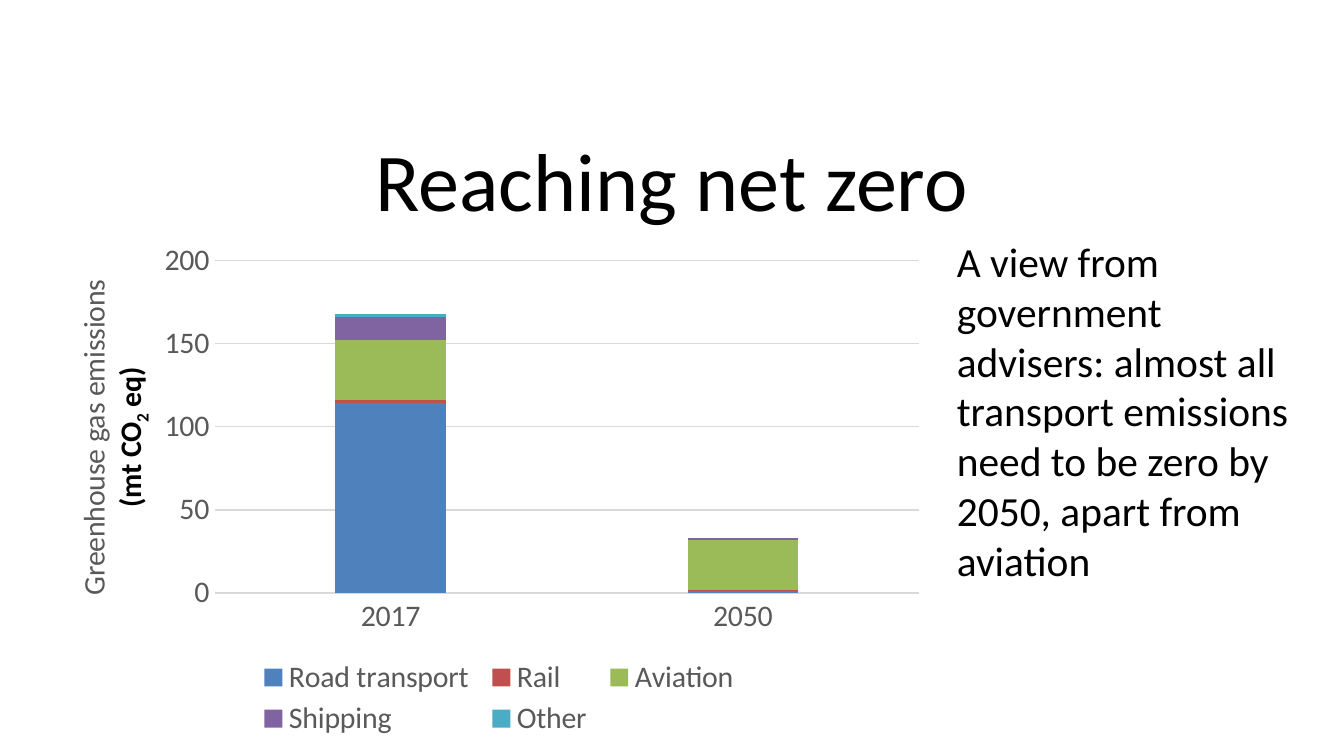
from pptx import Presentation
from pptx.chart.data import CategoryChartData
from pptx.dml.color import RGBColor
from pptx.enum.chart import XL_CHART_TYPE, XL_LEGEND_POSITION, XL_TICK_MARK
from pptx.enum.text import MSO_ANCHOR, MSO_AUTO_SIZE, PP_ALIGN
from pptx.oxml import parse_xml
from pptx.oxml.ns import nsdecls, qn
from pptx.util import Cm, Pt

STACKED = XL_CHART_TYPE.COLUMN_STACKED
BOTTOM = XL_LEGEND_POSITION.BOTTOM
NO_TICK = XL_TICK_MARK.NONE
TOP, MIDDLE = MSO_ANCHOR.TOP, MSO_ANCHOR.MIDDLE
NO_FIT = MSO_AUTO_SIZE.NONE
LEFT, CENTER = PP_ALIGN.LEFT, PP_ALIGN.CENTER

COLORS = {
    "text": "000000", "label": "595959", "grid": "D9D9D9",
    "Road transport": "4F81BD", "Rail": "C0504D", "Aviation": "9BBB59",
    "Shipping": "8064A2", "Other": "4BACC6",
}
YEARS = ["2017", "2050"]
DATA = {
    "Road transport": (114, 1), "Rail": (2, 1), "Aviation": (36, 30),
    "Shipping": (14, 1), "Other": (2, 0),
}


def color(name):
    return RGBColor.from_string(COLORS[name])


def assign(target, **values):
    for name, value in values.items():
        setattr(target, name, value)


def arrange(part, index, inner=False, **spots):
    """Place a chart part by fractions of the chart's size."""
    for old in part.findall(qn("c:layout")):
        part.remove(old)
    target = '<c:layoutTarget val="inner"/>' if inner else ""
    modes = "".join(f'<c:{key}Mode val="edge"/>' for key in "xy")
    sizes = "".join(f'<c:{key} val="{val}"/>' for key, val in spots.items())
    part.insert(index, parse_xml(
        f'<c:layout {nsdecls("c")}><c:manualLayout>{target}{modes}{sizes}'
        "</c:manualLayout></c:layout>"))


class Deck:
    """Holds the style and the current slide."""

    face = "Calibri"

    def __init__(self, width, height):
        self.file = Presentation()
        assign(self.file, slide_width=width, slide_height=height)
        self.slide = self.file.slides.add_slide(self.file.slide_layouts[1])

    def font(self, font, size, tone="text", bold=False):
        assign(font, name=self.face, size=Pt(size), bold=bold)
        font.color.rgb = color(tone)

    def fill(self, index, box, text, size, anchor, align):
        """Move a placeholder and write one plain paragraph in it."""
        shape = self.slide.placeholders[index]
        assign(shape, **dict(zip(("left", "top", "width", "height"), map(Cm, box))))
        frame = shape.text_frame
        assign(frame, text=text, word_wrap=True, auto_size=NO_FIT,
               vertical_anchor=anchor)
        para = frame.paragraphs[0]
        assign(para, alignment=align, space_before=Pt(0))
        props = para._p.get_or_add_pPr()
        for key in ("marL", "indent"):
            props.set(key, "0")
        props.append(parse_xml(f'<a:buNone {nsdecls("a")}/>'))
        self.font(para.runs[0].font, size)

    def chart(self, box):
        data = CategoryChartData()
        data.categories = YEARS
        for name, values in DATA.items():
            data.add_series(name, values)
        chart = self.slide.shapes.add_chart(STACKED, *map(Cm, box), data).chart
        self.font(chart.font, 10)
        assign(chart, has_title=False, has_legend=True)
        assign(chart.legend, position=BOTTOM, include_in_layout=False)
        self.font(chart.legend.font, 16, "label")

        plot = chart.plots[0]
        assign(plot, gap_width=219, overlap=100, vary_by_categories=False)
        for bar in plot.series:
            bar.format.fill.solid()
            bar.format.fill.fore_color.rgb = color(bar.name)

        for axis in (chart.category_axis, chart.value_axis):
            assign(axis, major_tick_mark=NO_TICK, minor_tick_mark=NO_TICK)
            self.font(axis.tick_labels.font, 16, "label")
        scale = chart.value_axis
        assign(scale, minimum_scale=0, maximum_scale=200, major_unit=50,
               has_major_gridlines=True)
        scale.format.line.fill.background()
        for line in (chart.category_axis.format.line,
                     scale.major_gridlines.format.line):
            line.color.rgb = color("grid")
            line.width = Pt(0.75)

        title = self.label(scale)
        root = chart._chartSpace.chart
        arrange(root.plotArea, 0, True, x=0.2, y=0.06, w=0.78, h=0.65)
        arrange(chart.legend._element, 1, x=0.24, y=0.83, w=0.55, h=0.17)
        arrange(title._element, 1, x=0.04, y=0.09)

    def label(self, axis):
        """Write the two-line upright title of the value axis."""
        title = axis.axis_title
        frame = title.text_frame
        props = frame._txBody.bodyPr
        props.set("rot", "-5400000")
        props.set("vert", "horz")
        first, second = frame.paragraphs[0], frame.add_paragraph()
        run = first.add_run()
        run.text = "Greenhouse gas emissions"
        self.font(run.font, 16, "label")
        for text, shift in (("(mt CO", 0), ("2", -25000), (" eq)", 0)):
            run = second.add_run()
            run.text = text
            self.font(run.font, 16, bold=True)
            run.font._element.set("baseline", str(shift))
        for para in (first, second):
            para.alignment = CENTER
        return title


def main():
    deck = Deck(Cm(25.4), Cm(14.29))
    deck.fill(0, (0.5, 2.18, 24.4, 2.4), "Reaching net zero", 44, MIDDLE, CENTER)
    deck.fill(1, (17.83, 4.34, 6.83, 7.2),
              "A view from government advisers: almost all transport emissions "
              "need to be zero by 2050, apart from aviation", 22.2, TOP, LEFT)
    deck.chart((0.64, 4.34, 17.07, 9.68))
    deck.file.save("out.pptx")


if __name__ == "__main__":
    main()
